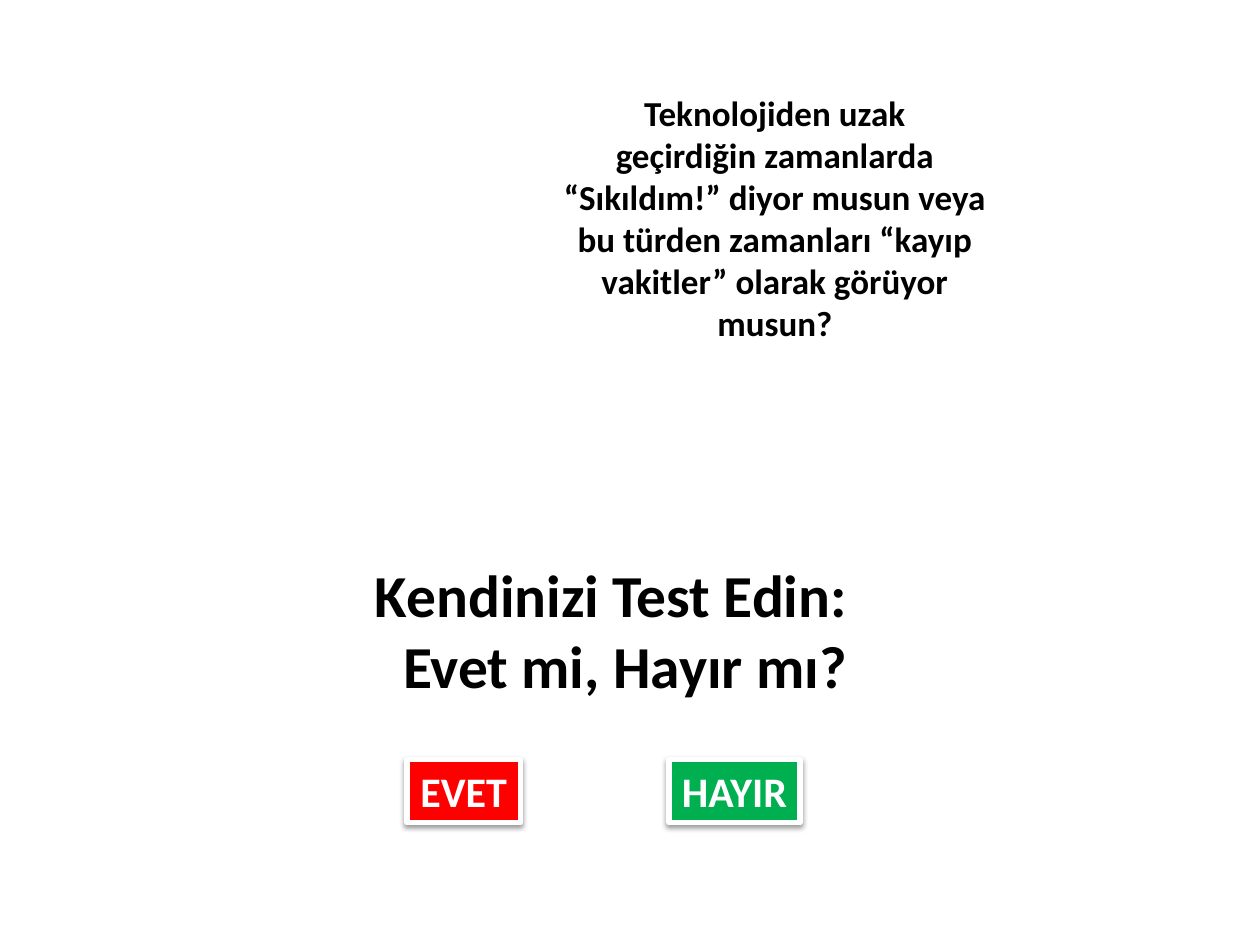
from lxml.etree import SubElement
from pptx import Presentation
from pptx.dml.color import RGBColor
from pptx.enum.shapes import MSO_SHAPE
from pptx.enum.text import MSO_ANCHOR, MSO_AUTO_SIZE, PP_ALIGN
from pptx.oxml.ns import qn
from pptx.util import Inches, Pt


def color(code):
    return RGBColor.from_string(code)


class Quiz:
    font = "Calibri"
    ink = "000000"
    paper = "FFFFFF"

    def __init__(self, deck):
        self.slide = deck.slides.add_slide(deck.slide_layouts[6])

    def fill_text(self, frame, text, size, code, align):
        frame.text = text
        frame.auto_size = MSO_AUTO_SIZE.SHAPE_TO_FIT_TEXT
        for para in frame.paragraphs:
            para.alignment = align
            for run in para.runs:
                run.font.name = self.font
                run.font.size = Pt(size)
                run.font.bold = True
                run.font.color.rgb = color(code)

    def label(self, area, text, size, align):
        box = self.slide.shapes.add_textbox(*map(Inches, area))
        box.text_frame.word_wrap = True
        self.fill_text(box.text_frame, text, size, self.ink, align)

    def button(self, area, text, fill):
        shape = self.slide.shapes.add_shape(MSO_SHAPE.RECTANGLE, *map(Inches, area))
        shape.fill.solid()
        shape.fill.fore_color.rgb = color(fill)
        shape.line.color.rgb = color(self.paper)
        shape.line.width = Pt(3)
        self.shade(shape)
        frame = shape.text_frame
        frame.word_wrap = False
        frame.vertical_anchor = MSO_ANCHOR.TOP
        self.fill_text(frame, text, 24, self.paper, PP_ALIGN.CENTER)

    def shade(self, shape):
        shape.shadow.inherit = False
        effects = shape._element.spPr.find(qn("a:effectLst"))
        outer = SubElement(effects, qn("a:outerShdw"), blurRad=str(Pt(3.1)),
                           dist=str(Pt(1.6)), dir="5400000", rotWithShape="0")
        tone = SubElement(outer, qn("a:srgbClr"), val=self.ink)
        SubElement(tone, qn("a:alpha"), val="38000")


def main():
    deck = Presentation()
    deck.slide_width, deck.slide_height = Inches(10), Inches(7.5)
    quiz = Quiz(deck)

    # Heading
    quiz.label((2.17, 4.38, 4.65, 1.25), "Kendinizi Test Edin: Evet mi, Hayır mı?",
               34, PP_ALIGN.RIGHT)

    # Answer buttons
    for left, width, text, fill in ((3.23, 0.9, "EVET", "FF0000"),
                                    (5.31, 1.04, "HAYIR", "00B050")):
        quiz.button((left, 6.03, width, 0.5), text, fill)

    # Question
    lines = (
        "Teknolojiden uzak",
        "geçirdiğin zamanlarda",
        "“Sıkıldım!” diyor musun veya",
        "bu türden zamanları “kayıp",
        "vakitler” olarak görüyor",
        "musun?",
    )
    quiz.label((4.12, 0.68, 4.06, 2.12), "\n".join(lines), 20, PP_ALIGN.CENTER)

    deck.save("out.pptx")


if __name__ == "__main__":
    main()
